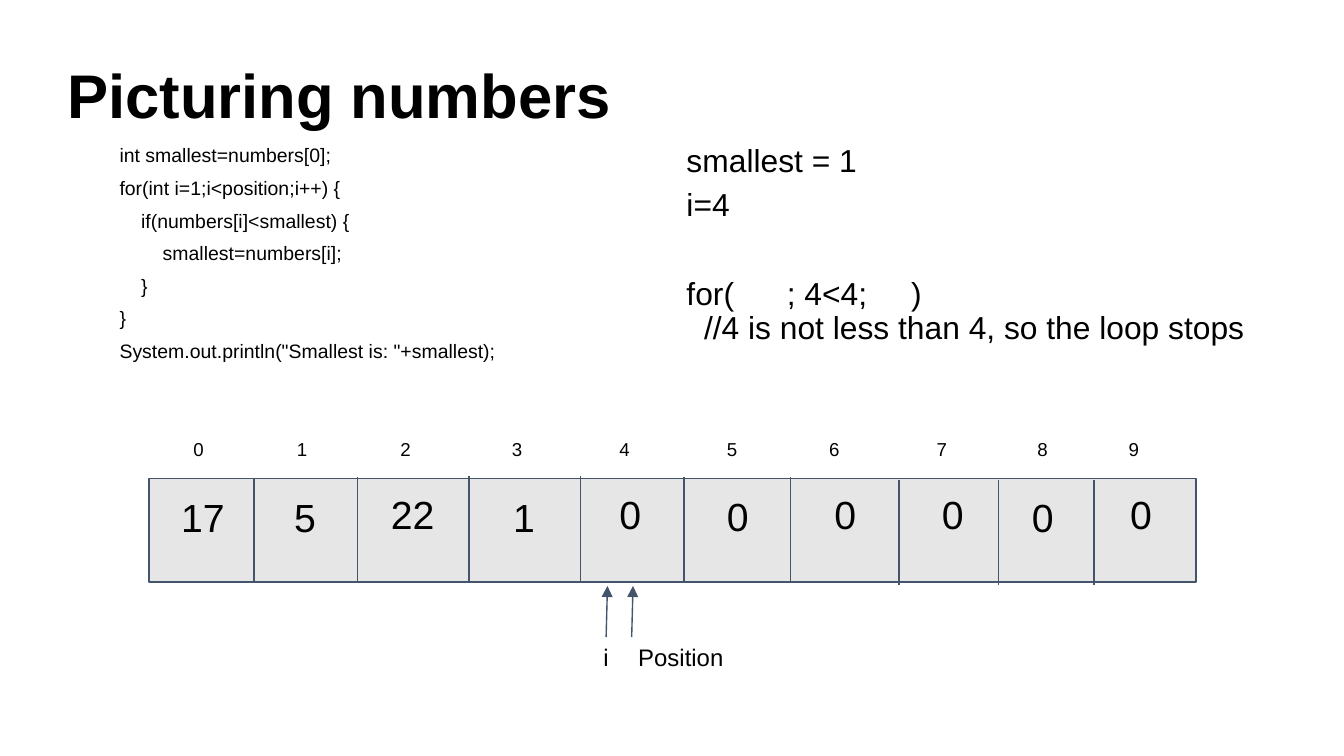
from typing import NamedTuple

from pptx import Presentation
from pptx.dml.color import RGBColor
from pptx.enum.shapes import MSO_CONNECTOR, MSO_SHAPE
from pptx.enum.text import MSO_ANCHOR, PP_ALIGN
from pptx.oxml.ns import qn
from pptx.util import Inches, Pt
from lxml.etree import SubElement

COLORS = {"text": "000000", "cell": "E7E6E6", "line": "44546A"}
FONT = "Arial"
ARRAY_LEFT, ARRAY_TOP, ARRAY_WIDTH, ARRAY_HEIGHT = 1.11, 3.56, 7.79, 0.77
CELL_WIDTH, DIVIDER_HEIGHT = 0.76, 0.78


class Cell(NamedTuple):
    value: str
    index_left: float
    value_left: float
    value_top: float
    divider_left: float
    divider_top: float


class Pointer(NamedTuple):
    name: str
    arrow_left: float
    label_left: float
    label_width: float


class Line(NamedTuple):
    text: str
    space_before: float = 7.5
    spacing: float = 0.8


# The first cell starts at the array's edge and needs no divider
CELLS = [
    Cell("17", 1.34, 1.13, 3.57, ARRAY_LEFT, ARRAY_TOP),
    Cell("5", 2.11, 1.89, 3.57, 1.89, 3.56),
    Cell("22", 2.88, 2.69, 3.55, 2.66, 3.55),
    Cell("1", 3.71, 3.52, 3.57, 3.49, 3.54),
    Cell("0", 4.51, 4.31, 3.55, 4.32, 3.54),
    Cell("0", 5.31, 5.11, 3.56, 5.09, 3.55),
    Cell("0", 6.07, 5.91, 3.55, 5.88, 3.55),
    Cell("0", 6.87, 6.71, 3.55, 6.69, 3.57),
    Cell("0", 7.62, 7.38, 3.57, 7.43, 3.57),
    Cell("0", 8.30, 8.11, 3.55, 8.14, 3.57),
]

POINTERS = [Pointer("Position", 4.7, 4.65, 1.01), Pointer("i", 4.51, 4.39, 0.39)]

CODE = [
    Line("        int smallest=numbers[0];", 0),
    Line("        for(int i=1;i<position;i++) {"),
    Line("            if(numbers[i]<smallest) {"),
    Line("                smallest=numbers[i];"),
    Line("            }"),
    Line("        }"),
    Line('        System.out.println("Smallest is: "+smallest);'),
]

TRACE = [
    Line("smallest = 1", 0),
    Line("i=4"),
    Line("for(      ; 4<4;     )", 31.5),
    Line("  //4 is not less than 4, so the loop stops", 0, 0.9),
]


def write(frame, lines: list[Line], *, size: float, bold: bool = False,
          align=PP_ALIGN.LEFT, anchor=MSO_ANCHOR.TOP, inset: float = 0.1) -> None:
    """Fill a text frame with formatted lines."""
    frame.word_wrap = True
    frame.vertical_anchor = anchor
    frame.margin_left = frame.margin_right = Inches(0.1)
    frame.margin_top = frame.margin_bottom = Inches(inset)
    for number, line in enumerate(lines):
        paragraph = frame.add_paragraph() if number else frame.paragraphs[0]
        paragraph.alignment = align
        paragraph.line_spacing = line.spacing
        paragraph.space_before = Pt(line.space_before)
        run = paragraph.add_run()
        run.text = line.text
        run.font.name = FONT
        run.font.size = Pt(size)
        run.font.bold = bold
        run.font.color.rgb = RGBColor.from_string(COLORS["text"])


def add_text(slide, left: float, top: float, width: float, height: float,
             lines: list[Line], **text_format) -> None:
    box = slide.shapes.add_textbox(Inches(left), Inches(top), Inches(width), Inches(height))
    write(box.text_frame, lines, **text_format)


def add_line(slide, x1: float, y1: float, x2: float, y2: float, arrow: bool = False) -> None:
    connector = slide.shapes.add_connector(
        MSO_CONNECTOR.STRAIGHT, Inches(x1), Inches(y1), Inches(x2), Inches(y2))
    connector.line.color.rgb = RGBColor.from_string(COLORS["line"])
    connector.line.width = Pt(0.75)
    properties = connector.element.spPr
    if arrow:
        SubElement(properties.find(qn("a:ln")), qn("a:tailEnd"), type="triangle")
    SubElement(properties, qn("a:effectLst"))


def add_array(slide) -> None:
    strip = slide.shapes.add_shape(
        MSO_SHAPE.RECTANGLE, Inches(ARRAY_LEFT), Inches(ARRAY_TOP),
        Inches(ARRAY_WIDTH), Inches(ARRAY_HEIGHT))
    strip.shadow.inherit = False
    strip.fill.solid()
    strip.fill.fore_color.rgb = RGBColor.from_string(COLORS["cell"])
    strip.line.color.rgb = RGBColor.from_string(COLORS["line"])
    strip.line.width = Pt(0.75)

    for index, cell in enumerate(CELLS):
        if index:
            add_line(slide, cell.divider_left, cell.divider_top,
                     cell.divider_left, cell.divider_top + DIVIDER_HEIGHT)
        add_text(slide, cell.index_left, 3.2, 0.39, 0.35,
                 [Line(str(index), 0, 0.9)], size=10)
        add_text(slide, cell.value_left, cell.value_top, CELL_WIDTH, ARRAY_HEIGHT,
                 [Line(cell.value, 0, 1.0)], size=21, align=PP_ALIGN.CENTER)


def add_pointer(slide, pointer: Pointer) -> None:
    add_line(slide, pointer.arrow_left, 4.74, pointer.arrow_left + 0.01, 4.36, arrow=True)
    add_text(slide, pointer.label_left, 4.71, pointer.label_width, 0.31,
             [Line(pointer.name, 0, 0.9)], size=12.8)


def main() -> None:
    # Widescreen slide, 16 to 9
    presentation = Presentation()
    presentation.slide_width = Inches(10)
    presentation.slide_height = Inches(10 * 9 / 16)
    slide = presentation.slides.add_slide(presentation.slide_layouts.get_by_name("Title Only"))

    # Title
    title = slide.shapes.title
    title.left, title.top = Inches(0.4), Inches(0.42)
    title.width, title.height = Inches(9.21), Inches(0.63)
    write(title.text_frame, [Line("Picturing numbers", 0, 0.9)], size=33, bold=True,
          anchor=MSO_ANCHOR.MIDDLE, inset=0.05)

    # Code and the state of its variables
    add_text(slide, 0.47, 1, 4.53, 2.18, CODE, size=10.4)
    add_text(slide, 5.01, 1, 4.4, 2.18, TRACE, size=17)

    # Array and the pointers below it
    add_array(slide)
    for pointer in POINTERS:
        add_pointer(slide, pointer)

    presentation.save("out.pptx")


if __name__ == "__main__":
    main()
